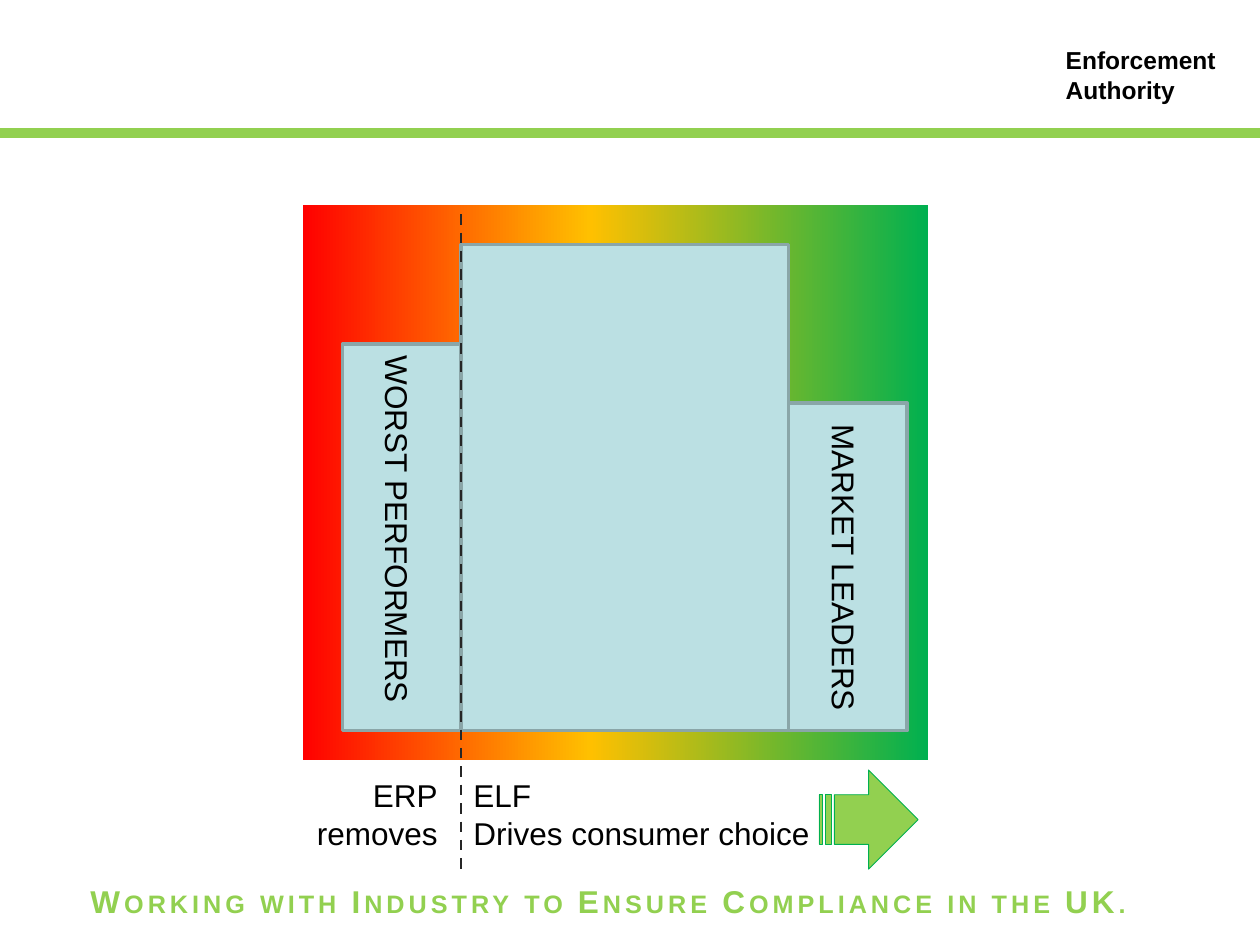
"""Build the slide that places market performers on a red-to-green scale."""
from copy import deepcopy

from pptx import Presentation
from pptx.dml.color import RGBColor
from pptx.enum import dml, shapes, text
from pptx.oxml import ns
from pptx.util import Pt

COLORS = {
    "lime": "92D050", "green": "00B050", "amber": "FFC000", "red": "FF0000",
    "bar": "BBE0E3", "bar_edge": "8AA6A8", "dash": "262626", "black": "000000",
}
DIVIDER = 263.5
BAR_BOTTOM = 417.6
BARS = [(195.8, 67.7, 221), (DIVIDER, 187.2, 277.9), (450.7, 67.7, 187.2)]
LABEL_TOP = 440


def rgb(name):
    return RGBColor.from_string(COLORS[name])


def add_shape(slide, kind, box, fill=None, line=None, width=1):
    shape = slide.shapes.add_shape(kind, *map(Pt, box))
    shape.shadow.inherit = False
    if fill:
        shape.fill.solid()
        shape.fill.fore_color.rgb = rgb(fill)
    if line:
        shape.line.color.rgb = rgb(line)
        shape.line.width = Pt(width)
    else:
        shape.line.fill.background()
    return shape


def add_gradient(slide, box, stops):
    shape = add_shape(slide, shapes.MSO_SHAPE.RECTANGLE, box)
    shape.fill.gradient()
    shape.fill.gradient_angle = 0
    first = shape.element.spPr.find(".//" + ns.qn("a:gs"))
    first.addnext(deepcopy(first))
    for stop, (position, color) in zip(shape.fill.gradient_stops, stops):
        stop.position = position
        stop.color.rgb = rgb(color)


def add_text(slide, lines, box, size=18, color="black", bold=False, align="LEFT",
             wrap=False, rotation=0, small_caps=False, spacing=None):
    shape = slide.shapes.add_textbox(*map(Pt, box))
    shape.rotation = rotation
    frame = shape.text_frame
    frame.word_wrap = wrap
    frame.auto_size = text.MSO_AUTO_SIZE.SHAPE_TO_FIT_TEXT
    frame.text = "\n".join(lines)
    for paragraph in frame.paragraphs:
        paragraph.alignment = getattr(text.PP_ALIGN, align)
        for run in paragraph.runs:
            run.font.name = "Arial"
            run.font.size = Pt(size)
            run.font.bold = bold
            run.font.color.rgb = rgb(color)
            properties = run.font._element
            if small_caps:
                properties.set("cap", "small")
            if spacing:
                properties.set("spc", str(round(spacing * 100)))


def add_dashed_line(slide, x, top, bottom):
    line = slide.shapes.add_connector(
        shapes.MSO_CONNECTOR.STRAIGHT, Pt(x), Pt(top), Pt(x), Pt(bottom))
    line.line.color.rgb = rgb("dash")
    line.line.width = Pt(1.5)
    line.line.dash_style = dml.MSO_LINE.DASH
    properties = line.element.spPr
    properties.append(properties.makeelement(ns.qn("a:effectLst"), {}))


def main():
    presentation = Presentation()
    presentation.slide_width, presentation.slide_height = Pt(720), Pt(540)
    slide = presentation.slides.add_slide(presentation.slide_layouts[6])
    rectangle = shapes.MSO_SHAPE.RECTANGLE

    add_shape(slide, rectangle, (0, 73.2, 720, 5.6), "lime")
    add_text(slide, ["Working with Industry to Ensure Compliance in the UK."],
             (44.6, 500.4, 630, 29), color="lime", bold=True, align="CENTER",
             wrap=True, small_caps=True, spacing=2.3)
    add_text(slide, ["Enforcement", "Authority"], (601.9, 22.3, 106.6, 41),
             size=14, bold=True, wrap=True)

    add_gradient(slide, (173, 116.9, 357.2, 317.4),
                 [(0, "red"), (0.46, "amber"), (1, "green")])
    for left, width, height in BARS:
        add_shape(slide, rectangle, (left, BAR_BOTTOM - height, width, height),
                  "bar", "bar_edge", 2)

    add_text(slide, ["WORST PERFORMERS"], (119.5, 289.1, 215.3, 29), rotation=90)
    add_text(slide, ["MARKET LEADERS"], (392.4, 310.9, 180, 29), rotation=90)
    add_text(slide, ["ERP", "removes"], (173, LABEL_TOP, 84.2, 51), align="RIGHT")
    add_text(slide, ["ELF", "Drives consumer choice"],
             (DIVIDER, LABEL_TOP, 208, 51))

    add_shape(slide, shapes.MSO_SHAPE.STRIPED_RIGHT_ARROW,
              (468, LABEL_TOP, 56.7, 56.7), "lime", "green", 0.5)
    add_dashed_line(slide, DIVIDER, 122.4, 496.8)
    presentation.save("out.pptx")


if __name__ == "__main__":
    main()
